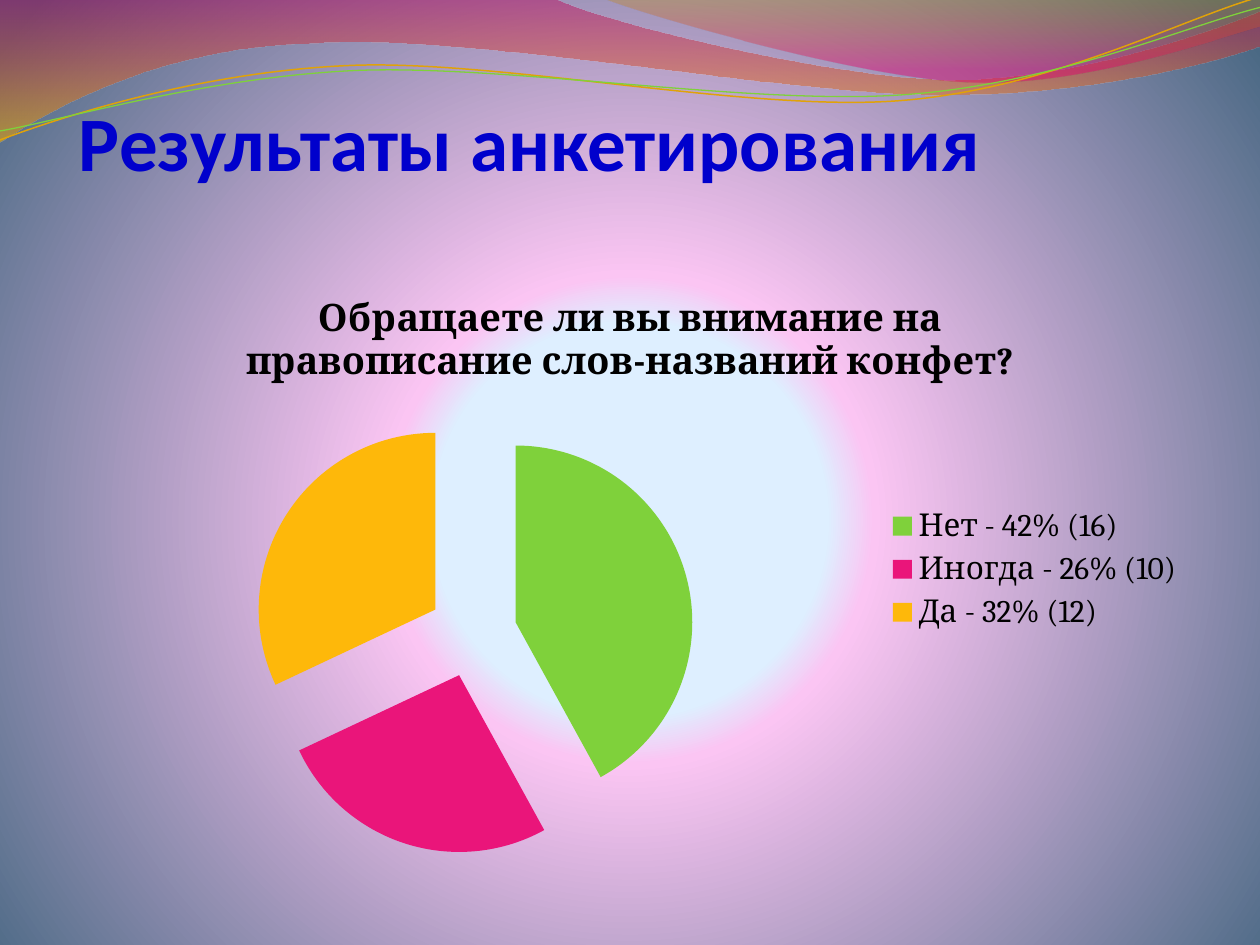
import math
import pptx
import pptx.util
import pptx.oxml
import pptx.oxml.ns
import pptx.chart.data
import pptx.enum.chart
import pptx.enum.text
from pptx.dml.color import RGBColor

Cm, Pt = pptx.util.Cm, pptx.util.Pt
qn = pptx.oxml.ns.qn

HUES = {
    "sky": "DEEFFF", "rose": "FBC5F3", "slate": "4A6984",
    "wine": "BD0059", "gold": "F0AB00", "ochre": "C38B00", "pink": "E1006B",
    "amber": "E0A209", "green": "7FD13B", "berry": "EA157A", "sun": "FEB80A",
    "blue": "0000CC", "black": "000000",
}
HEAD = "Результаты анкетирования"
ASK = "Обращаете ли вы внимание на правописание слов-названий конфет?"
VOTES = [
    ("Нет - 42% (16)", 42, "green"),
    ("Иногда - 26% (10)", 26, "berry"),
    ("Да - 32% (12)", 32, "sun"),
]
BACK = [(25, "sky", 100), (31, "rose", 59), (100, "slate", 100)]
ROUND = ('<a:path path="circle"><a:fillToRect l="10000" t="110000" '
         'r="10000" b="100000"/></a:path>')
DOWN = '<a:lin ang="5400000" scaled="1"/>'
BANDS = [
    ([(0, 0), (11.18, -0.03), (12.09, 0.43, 16.87, 1.6, 19.25, 1.6),
      (21.67, 1.6, 24.33, 0.66, 25.4, 0.23), (25.43, 0.91),
      (24.97, 1.12, 22.1, 1.93, 18.95, 1.91),
      (15.8, 1.91, 9.7, 0.71, 6.53, 0.86),
      (3.28, 0.91, 1.17, 2.11, -0.03, 2.87), (0, 0)],
     [(0, "wine", 45), (100, "gold", 55)]),
    ([(12.17, -0.03), (12.93, 0.28, 17.32, 1.57, 19.53, 1.65),
      (21.74, 1.75, 24.41, 0.81, 25.4, 0.53), (25.4, 0), (12.17, -0.03)],
     [(0, "ochre", 30), (80, "pink", 45)]),
]
LINES = [
    ([(0, 2.82), (1.22, 2.36, 4.01, 1.45, 7.04, 1.32),
      (10.03, 1.19, 15.06, 2.26, 18.11, 2.03),
      (21.16, 1.8, 23.83, 0.38, 25.35, -0.05)],
     (12.67, 1.46), "amber", 0.85),
    ([(0, 2.64), (1.19, 2.44, 4.17, 1.55, 7.19, 1.42),
      (10.24, 1.3, 15.16, 2.13, 18.21, 1.91),
      (21.23, 1.7, 23.9, 0.53, 25.4, 0.15)],
     (12.69, 1.5), "green", 0.75),
]
TILT = -2.7
UNITS = 1000


def put(item, **vals):
    for key, val in vals.items():
        setattr(item, key, val)


def tint(name):
    return RGBColor.from_string(HUES[name])


def style(font, face, size, hue, bold):
    put(font, name=face, size=Pt(size), bold=bold)
    font.color.rgb = tint(hue)


def blend(node, stops, tail):
    marks = "".join(
        f'<a:gs pos="{pos * 1000}"><a:srgbClr val="{HUES[hue]}">'
        f'<a:alpha val="{part * 1000}"/></a:srgbClr></a:gs>'
        for pos, hue, part in stops)
    old = node.find(qn("a:solidFill"))
    node.replace(old, pptx.oxml.parse_xml(
        f'<a:gradFill {pptx.oxml.ns.nsdecls("a")} rotWithShape="1">'
        f'<a:gsLst>{marks}</a:gsLst>{tail}</a:gradFill>'))


def turn(dot, mid, angle):
    x, y = dot[0] - mid[0], dot[1] - mid[1]
    c, s = math.cos(math.radians(angle)), math.sin(math.radians(angle))
    return mid[0] + x * c - y * s, mid[1] + x * s + y * c


def wave(slide, route, close, mid=(0, 0), tilt=0):
    dots = [turn(leg[i:i + 2], mid, -tilt)
            for leg in route for i in range(0, len(leg), 2)]
    dots = [(round(x * UNITS), round(y * UNITS)) for x, y in dots]
    pen = slide.shapes.build_freeform(*dots[0], scale=Cm(1) / UNITS)
    pen.add_line_segments(dots[1:], close=close)
    shape = pen.convert_to_shape()
    shape.shadow.inherit = False
    shape.rotation = tilt
    bend(shape, route)
    return shape


def bend(shape, route):
    parts = iter(list(shape._element.iter(qn("a:lnTo"))))
    for leg in route[1:]:
        first = next(parts)
        if len(leg) == 2:
            continue
        curve = pptx.oxml.parse_xml(
            f'<a:cubicBezTo {pptx.oxml.ns.nsdecls("a")}/>')
        first.addprevious(curve)
        for part in (first, next(parts), next(parts)):
            curve.append(part[0])
            part.getparent().remove(part)


def add_waves(slide):
    for route, stops in BANDS:
        band = wave(slide, route, True)
        band.line.fill.background()
        band.fill.solid()
        blend(band._element.spPr, stops, DOWN)
    for route, mid, hue, wide in LINES:
        line = wave(slide, route, False, mid, TILT)
        line.fill.background()
        line.line.color.rgb = tint(hue)
        line.line.width = Pt(wide)


def add_head(slide):
    head = slide.shapes.title
    slide.shapes._spTree.append(head._element)
    put(head, left=Cm(1.59), top=Cm(0.79), width=Cm(22.86), height=Cm(2.97))
    frame = head.text_frame
    frame.text = HEAD
    put(frame, margin_left=0, margin_right=0, margin_top=Cm(0.13),
        margin_bottom=0, word_wrap=True,
        auto_size=pptx.enum.text.MSO_AUTO_SIZE.NONE,
        vertical_anchor=pptx.enum.text.MSO_ANCHOR.BOTTOM)
    para = frame.paragraphs[0]
    para.alignment = pptx.enum.text.PP_ALIGN.LEFT
    style(para.runs[0].font, "Calibri", 44, "blue", True)


def add_pie(slide):
    data = pptx.chart.data.CategoryChartData()
    data.categories = [name for name, _, _ in VOTES]
    data.add_series(ASK, [val for _, val, _ in VOTES])
    chart = slide.shapes.add_chart(
        pptx.enum.chart.XL_CHART_TYPE.PIE,
        Cm(1.27), Cm(5.38), Cm(22.86), Cm(12.19), data).chart
    style(chart.font, "Cambria", 18, "black", False)
    put(chart, has_title=True, has_legend=True)
    frame = chart.chart_title.text_frame
    frame.text = ASK
    style(frame.paragraphs[0].runs[0].font, "Cambria", 21.6, "black", True)
    put(chart.legend, include_in_layout=False,
        position=pptx.enum.chart.XL_LEGEND_POSITION.RIGHT)
    plot = chart.plots[0]
    plot.vary_by_categories = True
    ring = plot.series[0]
    ring._element.find(qn("c:tx")).addnext(pptx.oxml.parse_xml(
        f'<c:explosion {pptx.oxml.ns.nsdecls("c")} val="25"/>'))
    for spot, (_, _, hue) in enumerate(VOTES):
        fill = ring.points[spot].format.fill
        fill.solid()
        fill.fore_color.rgb = tint(hue)


def main():
    deck = pptx.Presentation()
    put(deck, slide_width=Cm(25.4), slide_height=Cm(19.05))
    slide = deck.slides.add_slide(deck.slide_layouts[5])
    slide.background.fill.solid()
    blend(slide._element.find(".//" + qn("p:bgPr")), BACK, ROUND)
    add_waves(slide)
    add_head(slide)
    add_pie(slide)
    deck.save("out.pptx")


if __name__ == "__main__":
    main()
